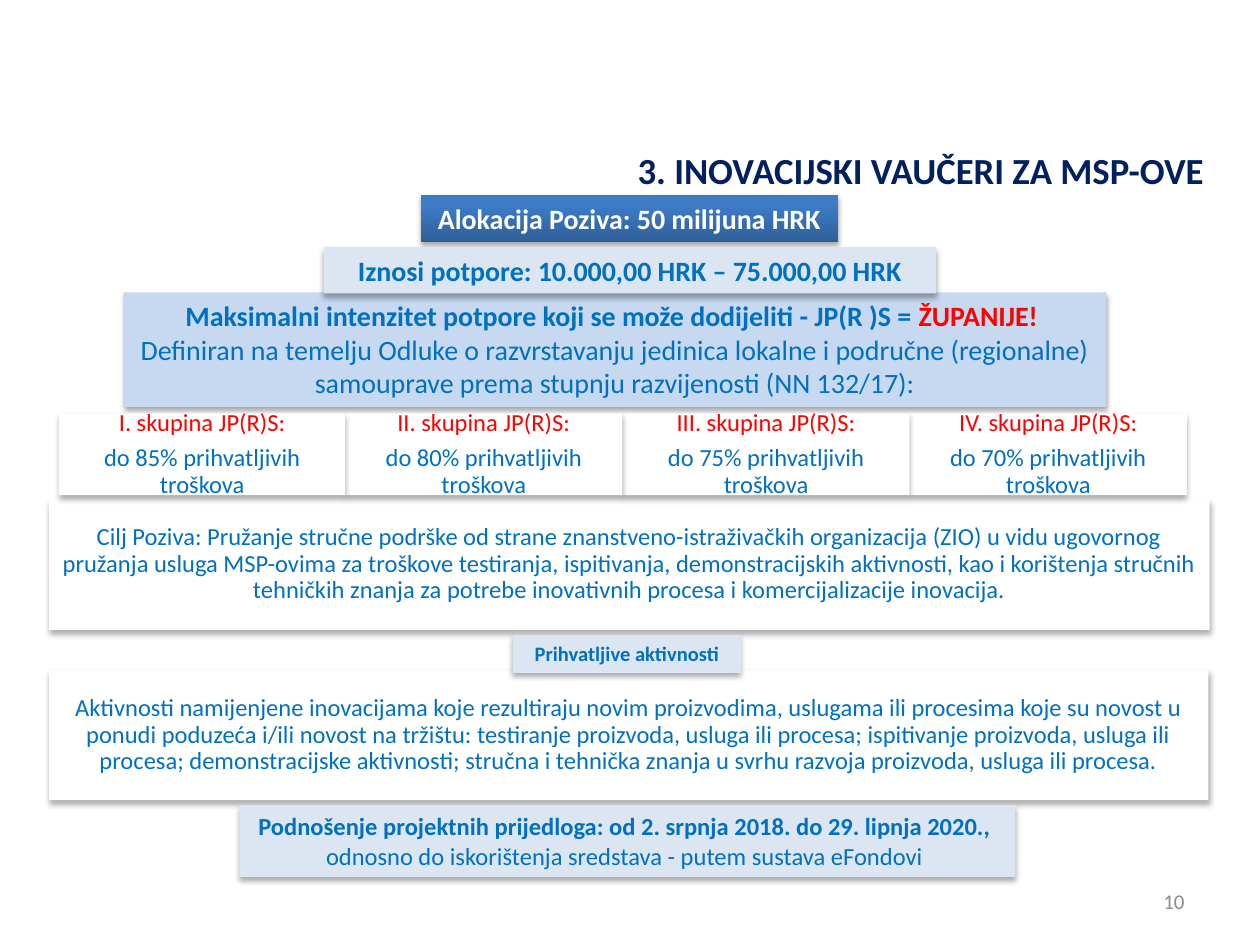
from dataclasses import dataclass
from itertools import accumulate

from lxml.etree import SubElement
from pptx import Presentation
from pptx.dml.color import RGBColor
from pptx.enum.shapes import MSO_SHAPE
from pptx.enum.text import MSO_ANCHOR, MSO_AUTO_SIZE as FIT, PP_ALIGN as ALIGN
from pptx.oxml.ns import qn
from pptx.util import Inches, Pt


@dataclass(frozen=True)
class Theme:
    font: str = "Calibri"
    navy: str = "002060"
    blue: str = "0070C0"
    red: str = "FF0000"
    white: str = "FFFFFF"
    grey: str = "8C8C8C"
    pale: str = "DCE6F2"
    light: str = "C6D9F1"
    grad_dark: str = "2F5F99"
    grad_bright: str = "3D7CC7"
    title: float = 21
    banner: float = 16
    body: float = 14
    number: float = 12
    label: float = 11.7


T = Theme()
SOFT = (32, 3.5, 2.2)
TIGHT = (35, 3.1, 1.8)
BODY = {"line_spacing": 0.9, "space_after": Pt(5)}


def add_shadow(sp, alpha, blur, dist):
    """Drop shadow straight down: alpha in percent, lengths in points."""
    effects = SubElement(sp._element.spPr, qn("a:effectLst"))
    shadow = SubElement(effects, qn("a:outerShdw"), blurRad=str(Pt(blur)),
                        dist=str(Pt(dist)), dir="5400000", rotWithShape="0")
    color = SubElement(shadow, qn("a:srgbClr"), val="000000")
    SubElement(color, qn("a:alpha"), val=str(alpha * 1000))


def write(sp, paragraphs, size, align=ALIGN.CENTER, para=None, **frame):
    """Fill a shape; each paragraph is a list of (text, colour, bold) runs."""
    tf = sp.text_frame
    for name, value in {"word_wrap": True, "vertical_anchor": MSO_ANCHOR.TOP, **frame}.items():
        setattr(tf, name, value)
    for i, runs in enumerate(paragraphs):
        p = tf.add_paragraph() if i else tf.paragraphs[0]
        for name, value in {"alignment": align, **(para or {})}.items():
            setattr(p, name, value)
        for text, color, bold in runs:
            r = p.add_run()
            r.text = text
            r.font.color.rgb = RGBColor.from_string(color)
            for name, value in {"name": T.font, "size": Pt(size), "bold": bold}.items():
                setattr(r.font, name, value)


def add_box(s, box, fill, shadow=SOFT):
    sp = s.shapes.add_shape(MSO_SHAPE.RECTANGLE, *map(Inches, box))
    sp.fill.solid()
    sp.fill.fore_color.rgb = RGBColor.from_string(fill)
    sp.line.fill.background()
    add_shadow(sp, *shadow)
    return sp


def add_banner(s, box, paragraphs, size=T.banner, fill=T.pale, shadow=SOFT):
    sp = add_box(s, box, fill, shadow)
    write(sp, paragraphs, size, auto_size=FIT.SHAPE_TO_FIT_TEXT)
    return sp


def add_card(s, box, paragraphs):
    """White panel with centred body text."""
    write(add_box(s, box, T.white), paragraphs, T.body, para=BODY,
          vertical_anchor=MSO_ANCHOR.MIDDLE,
          margin_left=Inches(0.09), margin_right=Inches(0.09))


def add_label(s, box, text, size, color, bold=False, **options):
    write(s.shapes.add_textbox(*map(Inches, box)), [[(text, color, bold)]], size,
          align=ALIGN.RIGHT, **options)


def add_allocation(s, box):
    sp = add_banner(s, box, [[("Alokacija Poziva: 50 milijuna HRK", T.white, True)]],
                    shadow=TIGHT)
    sp.fill.gradient()
    sp.fill.gradient_angle = 90
    stops = zip(sp.fill.gradient_stops, (0, 0.8), (T.grad_dark, T.grad_bright))
    for stop, position, color in stops:
        stop.position = position
        stop.color.rgb = RGBColor.from_string(color)


def add_groups(s, left, top, height, groups):
    """Cards set side by side, the leftmost in front."""
    lefts = accumulate((width for _, _, width in groups), initial=left)
    for x, (numeral, share, width) in reversed(list(zip(lefts, groups))):
        add_card(s, (x, top, width, height), [
            [(f"{numeral}. skupina JP(R)S:", T.red, False)],
            [(f"do {share}% prihvatljivih troškova", T.blue, False)],
        ])


def build_slide(s):
    add_allocation(s, (3.34, 1.55, 3.31, 0.37))
    add_banner(s, (0.98, 2.32, 7.8, 0.91), [
        [("Maksimalni intenzitet potpore koji se može dodijeliti - JP(R )S = ", T.blue, True),
         ("ŽUPANIJE! ", T.red, True)],
        [("Definiran na temelju Odluke o razvrstavanju jedinica lokalne i područne "
          "(regionalne) samouprave prema stupnju razvijenosti (NN 132/17):", T.blue, False)],
    ], fill=T.light, shadow=TIGHT)
    add_banner(s, (2.57, 1.96, 4.86, 0.37),
               [[("Iznosi potpore: 10.000,00 HRK – 75.000,00 HRK", T.blue, True)]])
    add_card(s, (0.39, 3.96, 9.21, 1.04), [[(
        "Cilj Poziva: Pružanje stručne podrške od strane znanstveno-istraživačkih "
        "organizacija (ZIO) u vidu ugovornog pružanja usluga MSP-ovima za troškove "
        "testiranja, ispitivanja, demonstracijskih aktivnosti, kao i korištenja stručnih "
        "tehničkih znanja za potrebe inovativnih procesa i komercijalizacije inovacija.",
        T.blue, False)]])
    add_card(s, (0.39, 5.32, 9.2, 1.03), [[(
        "Aktivnosti namijenjene inovacijama koje rezultiraju novim proizvodima, uslugama "
        "ili procesima koje su novost u ponudi poduzeća i/ili novost na tržištu: "
        "testiranje proizvoda, usluga ili procesa; ispitivanje proizvoda, usluga ili "
        "procesa; demonstracijske aktivnosti; stručna i tehnička znanja u svrhu razvoja "
        "proizvoda, usluga ili procesa.", T.blue, False)]])
    add_banner(s, (4.07, 5.04, 1.81, 0.3),
               [[("Prihvatljive aktivnosti", T.blue, True)]], size=T.label)
    add_banner(s, (1.9, 6.39, 6.16, 0.57), [
        [("Podnošenje projektnih prijedloga: od 2. srpnja 2018. do 29. lipnja 2020., ",
          T.blue, True)],
        [("odnosno do iskorištenja sredstava - putem sustava eFondovi ", T.blue, False)],
    ], size=T.body)
    add_label(s, (3.11, 1.07, 6.61, 0.48), "3. INOVACIJSKI VAUČERI ZA MSP-OVE ", T.title,
              T.navy, True, para={"line_spacing": 1.15}, auto_size=FIT.SHAPE_TO_FIT_TEXT)
    add_label(s, (7.17, 6.95, 2.33, 0.4), "10", T.number, T.grey,
              vertical_anchor=MSO_ANCHOR.MIDDLE)
    add_groups(s, 0.47, 3.28, 0.65, [
        ("I", 85, 2.27), ("II", 80, 2.2), ("III", 75, 2.28), ("IV", 70, 2.2)])


def main():
    prs = Presentation()
    prs.slide_width, prs.slide_height = Inches(10), Inches(7.5)
    build_slide(prs.slides.add_slide(prs.slide_layouts[6]))
    prs.save("out.pptx")


if __name__ == "__main__":
    main()
